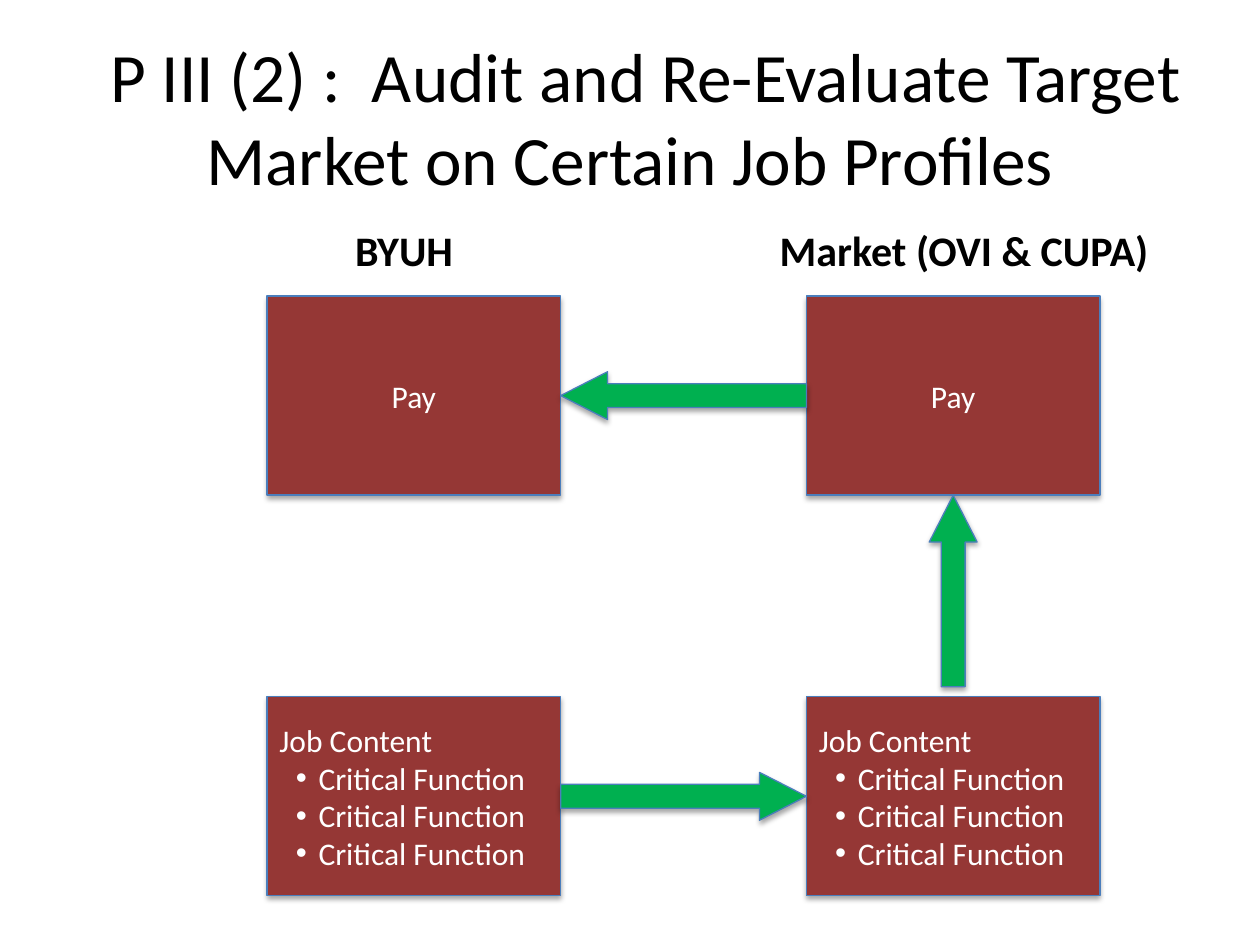
from dataclasses import dataclass

from lxml.etree import SubElement
from pptx import Presentation
from pptx.dml.color import RGBColor
from pptx.enum.shapes import MSO_SHAPE as Preset
from pptx.enum.text import MSO_ANCHOR as Anchor, PP_ALIGN as Align
from pptx.oxml.ns import qn
from pptx.util import Inches, Pt

FONT = "Calibri"
BLACK, WHITE = "000000", "FFFFFF"
BOX_FILL, ARROW_FILL, OUTLINE = "953735", "00B050", "4B7EBC"
COLUMNS, ROWS = (2.12, 6.4), (2.35, 5.53)
BOX_WIDTH, BOX_HEIGHT = 2.33, 1.58
ARROW_THICKNESS = 0.38
HORIZONTAL_GAP = COLUMNS[1] - COLUMNS[0] - BOX_WIDTH
UP_ARROW_LENGTH = 1.52


@dataclass(frozen=True)
class Area:
    left: float
    top: float
    width: float
    height: float

    def lengths(self) -> list:
        return [Inches(n) for n in (self.left, self.top, self.width, self.height)]


@dataclass(frozen=True)
class Label:
    text: str
    area: Area
    size: float
    bold: bool = False
    wrap: bool = True
    align: Align = Align.LEFT
    anchor: Anchor = Anchor.TOP
    first_indent: float = 0


@dataclass(frozen=True)
class JobBox:
    column: int
    row: int
    heading: str
    bullets: tuple = ()


@dataclass(frozen=True)
class Arrow:
    preset: Preset
    area: Area


def color(value: str) -> RGBColor:
    return RGBColor.from_string(value)


def style_paragraph(paragraph, size: float, value: str, bold: bool = False) -> None:
    font = paragraph.font
    font.name, font.size, font.bold = FONT, Pt(size), bold
    font.color.rgb = color(value)


def add_shadow(shape) -> None:
    shape.shadow.inherit = False
    effects = shape._element.spPr.find(qn("a:effectLst"))
    shadow = SubElement(effects, qn("a:outerShdw"), blurRad=str(Pt(3.1)),
                        dist=str(Pt(1.8)), dir="5400000", rotWithShape="0")
    tone = SubElement(shadow, qn("a:srgbClr"), val=BLACK)
    SubElement(tone, qn("a:alpha"), val="35000")


def add_filled(slide, preset: Preset, area: Area, fill: str):
    shape = slide.shapes.add_shape(preset, *area.lengths())
    shape.fill.solid()
    shape.fill.fore_color.rgb = color(fill)
    shape.line.color.rgb = color(OUTLINE)
    shape.line.width = Pt(0.75)
    add_shadow(shape)
    return shape


def add_bullet(paragraph) -> None:
    properties = paragraph._p.get_or_add_pPr()
    properties.set("marL", str(Inches(0.31)))
    properties.set("indent", str(Inches(-0.18)))
    SubElement(properties, qn("a:buFont"), typeface="Arial")
    SubElement(properties, qn("a:buChar"), char="•")


def draw_box(slide, box: JobBox) -> None:
    area = Area(COLUMNS[box.column], ROWS[box.row], BOX_WIDTH, BOX_HEIGHT)
    text_frame = add_filled(slide, Preset.RECTANGLE, area, BOX_FILL).text_frame
    text_frame.word_wrap = True
    text_frame.vertical_anchor = Anchor.MIDDLE
    text_frame.text = "\n".join((box.heading, *box.bullets))
    for index, paragraph in enumerate(text_frame.paragraphs):
        paragraph.alignment = Align.LEFT if box.bullets else Align.CENTER
        if index:
            add_bullet(paragraph)
        style_paragraph(paragraph, 18, WHITE)


def draw_arrow(slide, arrow: Arrow) -> None:
    shape = add_filled(slide, arrow.preset, arrow.area, ARROW_FILL)
    shape.adjustments[0], shape.adjustments[1] = 0.5, 0.98


def draw_label(slide, label: Label) -> None:
    text_frame = slide.shapes.add_textbox(*label.area.lengths()).text_frame
    text_frame.word_wrap = label.wrap
    text_frame.vertical_anchor = label.anchor
    text_frame.text = label.text
    paragraph = text_frame.paragraphs[0]
    paragraph.alignment = label.align
    if label.first_indent:
        paragraph._p.get_or_add_pPr().set("indent", str(Inches(label.first_indent)))
    style_paragraph(paragraph, label.size, BLACK, label.bold)


def horizontal_arrow(preset: Preset, row: int) -> Arrow:
    top = ROWS[row] + (BOX_HEIGHT - ARROW_THICKNESS) / 2
    return Arrow(preset, Area(COLUMNS[0] + BOX_WIDTH, top, HORIZONTAL_GAP, ARROW_THICKNESS))


def up_arrow(column: int) -> Arrow:
    left = COLUMNS[column] + (BOX_WIDTH - ARROW_THICKNESS) / 2
    return Arrow(Preset.UP_ARROW,
                 Area(left, ROWS[0] + BOX_HEIGHT, ARROW_THICKNESS, UP_ARROW_LENGTH))


def main() -> None:
    """Build the slide that compares job pay and content with the market."""
    presentation = Presentation()
    presentation.slide_width, presentation.slide_height = Inches(10), Inches(7.5)
    slide = presentation.slides.add_slide(presentation.slide_layouts[6])
    functions = ("Critical Function",) * 3
    labels = (
        Label("P III (2) :  Audit and Re-Evaluate Target Market on Certain Job Profiles",
              Area(0.5, 0.3, 9, 1.25), 39.6, align=Align.CENTER,
              anchor=Anchor.MIDDLE, first_indent=0.25),
        Label("BYUH", Area(2.72, 1.73, 1.15, 0.5), 24, bold=True, wrap=False),
        Label("Market (OVI & CUPA)", Area(6.09, 1.73, 3.17, 0.5), 24, bold=True, wrap=False),
    )
    for label in labels:
        draw_label(slide, label)
    for column in range(len(COLUMNS)):
        draw_box(slide, JobBox(column, 0, "Pay"))
        draw_box(slide, JobBox(column, 1, "Job Content", functions))
    for arrow in (horizontal_arrow(Preset.RIGHT_ARROW, 1),
                  horizontal_arrow(Preset.LEFT_ARROW, 0), up_arrow(1)):
        draw_arrow(slide, arrow)
    presentation.save("out.pptx")


if __name__ == "__main__":
    main()
